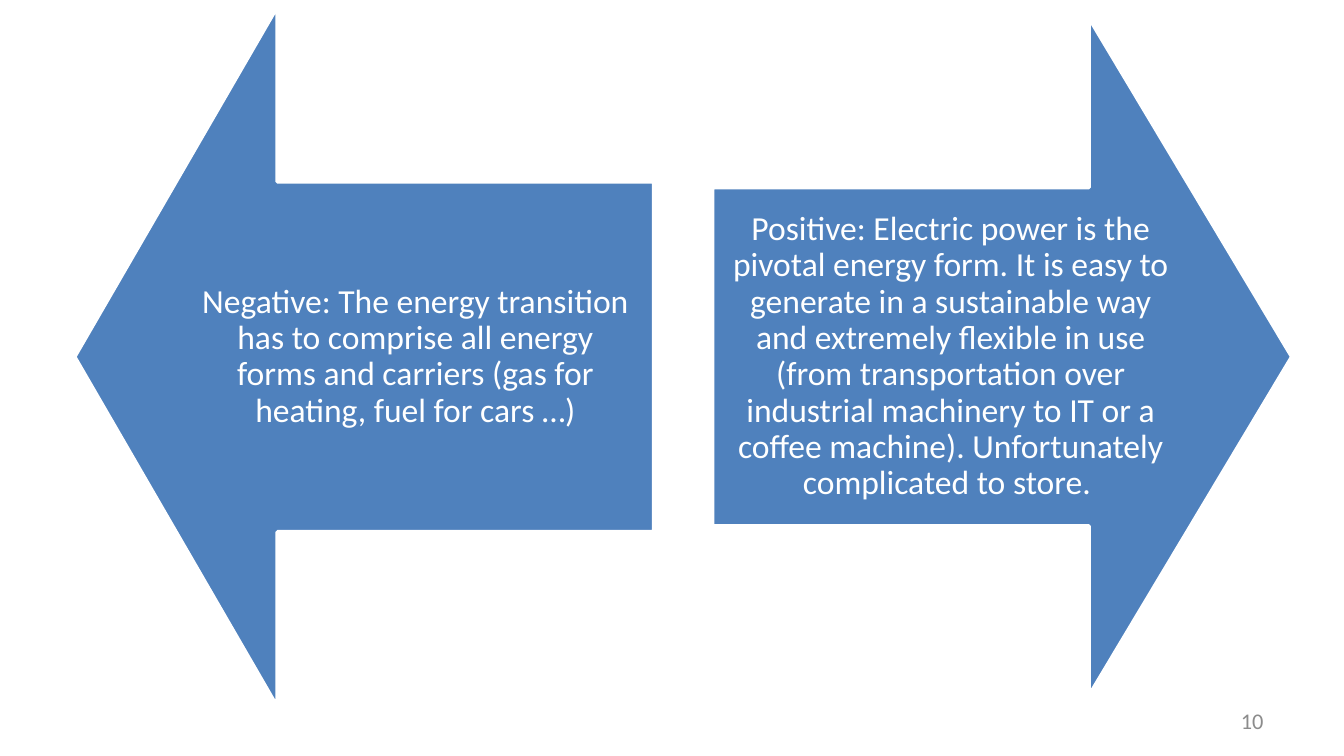
"""Build a slide that sets a negative and a positive argument on opposing arrows."""
from pptx import Presentation
from pptx.dml.color import RGBColor
from pptx.enum.shapes import MSO_SHAPE as Shape
from pptx.enum.text import MSO_ANCHOR as Anchor, PP_ALIGN as Align
from pptx.util import Inches, Pt

WIDTH = 10
HEIGHT = WIDTH * 9 / 16
CELL = WIDTH / 100
MIDDLE_ROW = 26.55
ARROW_LENGTH = 43.1
LABEL_WIDTH = 35.6
LABEL_SHIFT = 3.82
BLUE, WHITE, GRAY = "4F81BD", "FFFFFF", "8C8C8C"

ARGUMENTS = [
    {"center": 27.1, "span": 52.1, "direction": -1,
     "text": "Negative: The energy transition has to comprise all energy forms "
             "and carriers (gas for heating, fuel for cars …)"},
    {"center": 74.57, "span": 50.4, "direction": 1,
     "text": "Positive: Electric power is the pivotal energy form. It is easy to "
             "generate in a sustainable way and extremely flexible in use (from "
             "transportation over industrial machinery to IT or a coffee machine). "
             "Unfortunately complicated to store. "},
]


def color(value):
    """Turn a hex string into a colour."""
    return RGBColor.from_string(value)


def apply(target, values):
    """Set each named attribute of the target."""
    for name, value in values.items():
        setattr(target, name, value)


def centered(center, middle, width, height):
    """Return left, top, width and height of a frame given in grid cells."""
    cells = (center - width / 2, middle - height / 2, width, height)
    return [Inches(cell * CELL) for cell in cells]


def add_text(page, frame, text, size, ink, inset, para_format):
    """Add a wrapped, vertically centred text box."""
    box = page.shapes.add_textbox(*frame)
    sides = ("left", "top", "right", "bottom")
    margins = {f"margin_{side}": Inches(gap) for side, gap in zip(sides, inset)}
    apply(box.text_frame,
          {"word_wrap": True, "vertical_anchor": Anchor.MIDDLE, **margins})
    para = box.text_frame.paragraphs[0]
    apply(para, para_format)
    span = para.add_run()
    span.text = text
    apply(span.font, {"name": "Calibri", "size": Pt(size)})
    span.font.color.rgb = color(ink)


def add_arrow(page, center, span, direction):
    """Add a block arrow that points left (-1) or right (1)."""
    frame = centered(center, MIDDLE_ROW, span, ARROW_LENGTH)
    arrow = page.shapes.add_shape(Shape.UP_ARROW, *frame)
    arrow.rotation = 90 * direction % 360
    arrow.adjustments[0], arrow.adjustments[1] = 0.5, 0.35
    arrow.shadow.inherit = False
    arrow.fill.solid()
    arrow.fill.fore_color.rgb = color(BLUE)
    arrow.line.color.rgb = color(WHITE)
    arrow.line.width = Pt(2)


def add_argument(page, center, span, direction, text):
    """Add an arrow and its label, which is shifted towards the tail."""
    add_arrow(page, center, span, direction)
    frame = centered(center - direction * LABEL_SHIFT, MIDDLE_ROW,
                     LABEL_WIDTH, span / 2)
    add_text(page, frame, text, 18, WHITE, [0.14] * 4,
             {"alignment": Align.CENTER, "line_spacing": 0.9})


def add_page_number(page, number):
    """Add the page number in the lower right corner."""
    add_text(page, centered(83.35, 53.65, 23.3, 3), number, 12, GRAY,
             [0.1, 0.05, 0.1, 0.05], {"alignment": Align.RIGHT})


def main():
    """Build and save the deck."""
    deck = Presentation()
    apply(deck, {"slide_width": Inches(WIDTH), "slide_height": Inches(HEIGHT)})
    page = deck.slides.add_slide(deck.slide_layouts[6])
    add_page_number(page, "10")
    for argument in ARGUMENTS:
        add_argument(page, **argument)
    deck.save("out.pptx")


if __name__ == "__main__":
    main()
